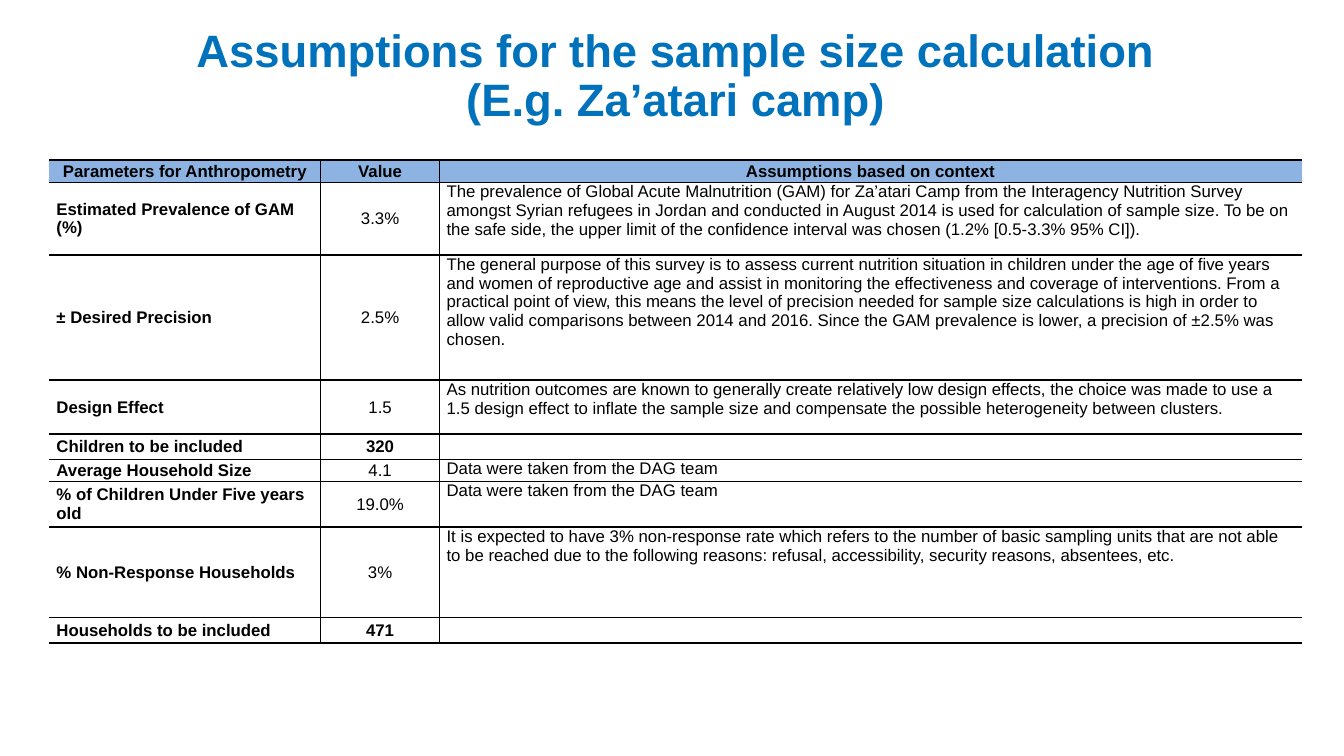
from pptx import Presentation
from pptx.dml.color import RGBColor
from pptx.enum import text
from pptx.oxml import parse_xml
from pptx.oxml.ns import nsdecls
from pptx.util import Inches, Pt

TITLE = "Assumptions for the sample size calculation\v(E.g. Za’atari camp)"
HEADER = ("Parameters for Anthropometry", "Value", "Assumptions based on context")
# Parameter, value, assumption
PARAMETERS = [
    ("Estimated Prevalence of GAM (%)", "3.3%",
     "The prevalence of Global Acute Malnutrition (GAM) for Za’atari Camp from the "
     "Interagency Nutrition Survey amongst Syrian refugees in Jordan and conducted in "
     "August 2014 is used for calculation of sample size. To be on the safe side, the "
     "upper limit of the confidence interval was chosen (1.2% [0.5-3.3% 95% CI])."),
    ("± Desired Precision", "2.5%",
     "The general purpose of this survey is to assess current nutrition situation in "
     "children under the age of five years and women of reproductive age and assist in "
     "monitoring the effectiveness and coverage of interventions. From a practical point "
     "of view, this means the level of precision needed for sample size calculations is "
     "high in order to allow valid comparisons between 2014 and 2016. Since the GAM "
     "prevalence is lower, a precision of ±2.5% was chosen."),
    ("Design Effect", "1.5",
     "As nutrition outcomes are known to generally create relatively low design effects, "
     "the choice was made to use a 1.5 design effect to inflate the sample size and "
     "compensate the possible heterogeneity between clusters."),
    ("Children to be included", "320", ""),
    ("Average Household Size", "4.1", "Data were taken from the DAG team"),
    ("% of Children Under Five years old", "19.0%", "Data were taken from the DAG team"),
    ("% Non-Response Households", "3%",
     "It is expected to have 3% non-response rate which refers to the number of basic "
     "sampling units that are not able to be reached due to the following reasons: "
     "refusal, accessibility, security reasons, absentees, etc."),
    ("Households to be included", "471", ""),
]
COLUMN_WIDTHS = (2.69, 1.18, 8.55)
ROW_HEIGHTS = (0.22, 0.72, 1.24, 0.54, 0.25, 0.22, 0.45, 0.9, 0.25)
TOTALS = ("320", "471")
THICK_RULES = (0, 1, 4, 9)  # horizontal rules, counted from the top of the table

FONT = "Arial"
BLACK, TITLE_BLUE, HEADER_BLUE = "000000", "0072BC", "8DB3E2"
LEFT, CENTER = text.PP_ALIGN.LEFT, text.PP_ALIGN.CENTER
TOP, MIDDLE, BOTTOM = text.MSO_ANCHOR.TOP, text.MSO_ANCHOR.MIDDLE, text.MSO_ANCHOR.BOTTOM


def color(hex_string):
    return RGBColor.from_string(hex_string)


def write(frame, content, size=12, bold=False, fill=BLACK, align=LEFT, spacing=None):
    frame.word_wrap = True
    paragraph = frame.paragraphs[0]
    paragraph.text = content
    paragraph.alignment = align
    paragraph.line_spacing = spacing
    if not content:
        # Keeps an empty cell from growing to the default text size
        paragraph._p.get_or_add_endParaRPr().set("sz", str(size * 100))
    for run in paragraph.runs:
        font = run.font
        font.name, font.size, font.bold = FONT, Pt(size), bold
        font.color.rgb = color(fill)


def set_borders(cell, widths):
    """Draw the left, right, top and bottom borders; a width of 0 hides one."""
    properties = cell._tc.get_or_add_tcPr()
    for index, (side, width) in enumerate(zip("LRTB", widths)):
        paint = f'<a:solidFill><a:srgbClr val="{BLACK}"/></a:solidFill>' if width else "<a:noFill/>"
        border = parse_xml(f'<a:ln{side} {nsdecls("a")} w="{Pt(width)}">{paint}</a:ln{side}>')
        properties.insert(index, border)


def rule_width(rule):
    return 1.5 if rule in THICK_RULES else 1


def add_title(slide):
    box = slide.shapes.add_textbox(Inches(1.2), Inches(0.31), Inches(11), Inches(0.94))
    frame = box.text_frame
    frame.margin_left = frame.margin_right = frame.margin_top = frame.margin_bottom = 0
    frame.vertical_anchor = BOTTOM
    write(frame, TITLE, size=32.4, bold=True, fill=TITLE_BLUE, align=CENTER, spacing=0.9)


def add_parameter_table(slide):
    rows = [HEADER, *PARAMETERS]
    table = slide.shapes.add_table(
        len(rows), len(HEADER), Inches(0.49), Inches(1.59),
        Inches(sum(COLUMN_WIDTHS)), Inches(sum(ROW_HEIGHTS))).table
    table.first_row = table.horz_banding = False
    for column, width in zip(table.columns, COLUMN_WIDTHS):
        column.width = Inches(width)
    for row, height in zip(table.rows, ROW_HEIGHTS):
        row.height = Inches(height)

    last = len(HEADER) - 1
    for r, row in enumerate(rows):
        for c, content in enumerate(row):
            cell = table.cell(r, c)
            header = r == 0
            cell.margin_left = cell.margin_right = Inches(0.07)
            cell.margin_top = cell.margin_bottom = 0
            cell.vertical_anchor = MIDDLE if header or c < last else TOP
            if header:
                cell.fill.solid()
                cell.fill.fore_color.rgb = color(HEADER_BLUE)
            else:
                cell.fill.background()
            set_borders(cell, (int(c > 0), int(c < last), rule_width(r), rule_width(r + 1)))
            write(cell.text_frame, content,
                  bold=header or c == 0 or content in TOTALS,
                  align=CENTER if header or c == 1 else LEFT)


def main():
    presentation = Presentation()
    presentation.slide_width, presentation.slide_height = Inches(13.33), Inches(7.5)
    slide = presentation.slides.add_slide(presentation.slide_layouts[6])
    add_title(slide)
    add_parameter_table(slide)
    presentation.save("out.pptx")


if __name__ == "__main__":
    main()
